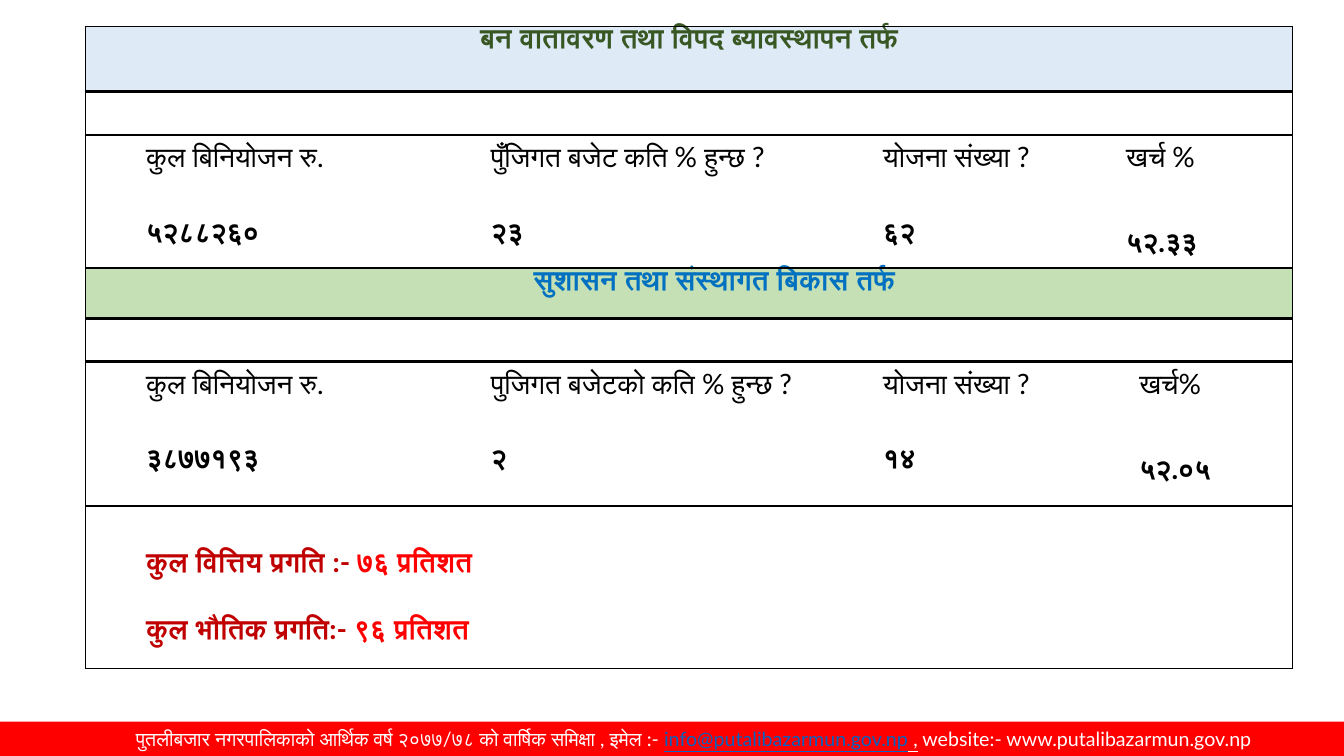
import pptx
import pptx.dml.color
import pptx.enum.shapes
import pptx.enum.text
import pptx.oxml
import pptx.oxml.ns
import pptx.util
from dataclasses import dataclass

Inches, Pt = pptx.util.Inches, pptx.util.Pt
ALIGN = pptx.enum.text.PP_ALIGN
SLIDE_W, SLIDE_H = Inches(13.33), Inches(7.5)


@dataclass(frozen=True)
class Theme:
    font: str = "Lato"
    body_size: int = 20
    footer_size: int = 14
    thin: float = 1
    thick: float = 2.25
    black: str = "000000"
    white: str = "FFFFFF"
    red: str = "FF0000"
    dark_red: str = "C00000"
    link: str = "0563C1"
    forest_text: str = "385723"
    forest_band: str = "DEEBF7"
    governance_text: str = "0070C0"
    governance_band: str = "C5E0B4"


THEME = Theme()
COLUMNS = (3.42, 3.89, 2.41, 0.13, 2.12)
ROWS = (0.65, 0.43, 0.84, 0.48, 0.5, 0.43, 0.84, 0.59, 1.61)
# Weight of each horizontal rule, from the top edge to the bottom edge.
RULES = (THEME.thin, THEME.thick, THEME.thick, 0, THEME.thick,
         THEME.thick, THEME.thick, 0, THEME.thick, THEME.thin)
PAD, INDENT, TOP = 0.1, 0.6, 0.05
LINE = THEME.body_size * 1.2

FOREST = (
    ("कुल बिनियोजन रु.", "पुँजिगत बजेट कति % हुन्छ ?", "योजना संख्या ?", "खर्च %"),
    ("५२८८२६०", "२३", "६२", "५२.३३"),
)
GOVERNANCE = (
    ("कुल बिनियोजन रु.", "पुजिगत बजेटको कति % हुन्छ ?", "योजना संख्या ?", "खर्च%"),
    ("३८७७१९३", "२", "१४", "५२.०५"),
)
PROGRESS = (("कुल वित्तिय प्रगति :- ", "७६ प्रतिशत"), ("कुल भौतिक प्रगति:- ", "९६ प्रतिशत"))


def add_text(paragraph, text, color=THEME.black, size=THEME.body_size,
             bold=False, underline=False):
    run = paragraph.add_run()
    run.text = text
    font = run.font
    font.name, font.size, font.bold, font.underline = THEME.font, Pt(size), bold, underline
    font.color.rgb = pptx.dml.color.RGBColor.from_string(color)


def set_borders(cell, left, right, top, bottom):
    """Draw each side at its weight in points; zero hides the side."""
    properties = cell._tc.get_or_add_tcPr()
    sides = (("lnL", left), ("lnR", right), ("lnT", top), ("lnB", bottom))
    for position, (tag, weight) in enumerate(sides):
        paint = (f'<a:solidFill><a:srgbClr val="{THEME.black}"/></a:solidFill>'
                 if weight else "<a:noFill/>")
        properties.insert(position, pptx.oxml.parse_xml(
            f'<a:{tag} {pptx.oxml.ns.nsdecls("a")} w="{int(Pt(weight))}">{paint}</a:{tag}>'))


def style_grid(table):
    last = len(COLUMNS) - 1
    for r in range(len(ROWS)):
        for c in range(len(COLUMNS)):
            cell = table.cell(r, c)
            cell.fill.background()
            span = cell.span_width if cell.is_merge_origin else 1
            set_borders(cell, THEME.thin if c == 0 else 0,
                        THEME.thin if c + span > last else 0,
                        RULES[r], RULES[r + 1])


def set_margins(cell, left, top):
    cell.margin_left, cell.margin_right = Inches(left), Inches(PAD)
    cell.margin_top, cell.margin_bottom = Inches(top), Inches(TOP)


def fill_heading(cell, text, color, band, left):
    set_margins(cell, left, 0)
    cell.fill.solid()
    cell.fill.fore_color.rgb = pptx.dml.color.RGBColor.from_string(band)
    paragraph = cell.text_frame.paragraphs[0]
    paragraph.alignment = ALIGN.CENTER
    add_text(paragraph, text, color, bold=True)


def fill_figures(table, first_row, figures, starts):
    """Write a row of labels and, below it, a row of bold values."""
    for offset, texts in enumerate(figures):
        for c, text in zip(starts, texts):
            cell = table.cell(first_row + offset, c)
            raised = offset == 1 and c != starts[-1]
            set_margins(cell, INDENT, 0 if raised else TOP)
            add_text(cell.text_frame.paragraphs[0], text, bold=offset == 1)


def fill_progress(cell):
    set_margins(cell, INDENT, TOP + LINE / 72)
    for i, (label, value) in enumerate(PROGRESS):
        frame = cell.text_frame
        paragraph = frame.add_paragraph() if i else frame.paragraphs[0]
        if i:
            paragraph.space_before = Pt(LINE)
        add_text(paragraph, label, THEME.dark_red, bold=True)
        add_text(paragraph, value, THEME.red, bold=True)


def add_budget_table(slide, left, top, width, height):
    table = slide.shapes.add_table(len(ROWS), len(COLUMNS), left, top, width, height).table
    table.first_row = table.horz_banding = False
    for column, share in zip(table.columns, COLUMNS):
        column.width = int(width * share / sum(COLUMNS))
    for row, share in zip(table.rows, ROWS):
        row.height = int(height * share / sum(ROWS))

    last = len(COLUMNS) - 1
    full_width = [(r, 0, last) for r in (0, 1, 4, 5)]
    forest_spans = [(r, 3, 4) for r in (2, 3)]
    governance_spans = [(r, 2, 3) for r in (6, 7)]
    for r, start, end in full_width + forest_spans + governance_spans + [(8, 0, 1), (8, 2, 3)]:
        table.cell(r, start).merge(table.cell(r, end))
    style_grid(table)

    fill_heading(table.cell(0, 0), "बन वातावरण तथा विपद ब्यावस्थापन तर्फ",
                 THEME.forest_text, THEME.forest_band, PAD)
    fill_figures(table, 2, FOREST, (0, 1, 2, 3))
    fill_heading(table.cell(4, 0), "सुशासन तथा संस्थागत बिकास तर्फ",
                 THEME.governance_text, THEME.governance_band, INDENT)
    fill_figures(table, 6, GOVERNANCE, (0, 1, 2, 4))
    fill_progress(table.cell(8, 0))


def add_footer(slide, left, top, width, height):
    bar = slide.shapes.add_shape(pptx.enum.shapes.MSO_SHAPE.RECTANGLE, left, top, width, height)
    bar.shadow.inherit = False
    bar.fill.solid()
    bar.fill.fore_color.rgb = pptx.dml.color.RGBColor.from_string(THEME.red)
    bar.line.fill.background()
    frame = bar.text_frame
    frame.word_wrap = True
    frame.vertical_anchor = pptx.enum.text.MSO_ANCHOR.MIDDLE
    frame.margin_left = Inches(0.53)
    paragraph = frame.paragraphs[0]
    paragraph.alignment = ALIGN.CENTER
    for text, color, underline in (
            ("पुतलीबजार नगरपालिकाको आर्थिक वर्ष २०७७/७८ को वार्षिक समिक्षा , इमेल :- ",
             THEME.white, False),
            ("info@putalibazarmun.gov.np", THEME.link, True),
            (" ,", THEME.white, True),
            (" website:- www.putalibazarmun.gov.np", THEME.white, False)):
        add_text(paragraph, text, color, THEME.footer_size, underline=underline)


def main():
    deck = pptx.Presentation()
    deck.slide_width, deck.slide_height = SLIDE_W, SLIDE_H
    slide = deck.slides.add_slide(deck.slide_layouts[6])
    footer_height = Inches(0.34)
    add_footer(slide, 0, SLIDE_H - footer_height, SLIDE_W, footer_height)
    add_budget_table(slide, Inches(0.85), Inches(0.26),
                     Inches(sum(COLUMNS)), Inches(sum(ROWS)))
    deck.save("out.pptx")


if __name__ == "__main__":
    main()
